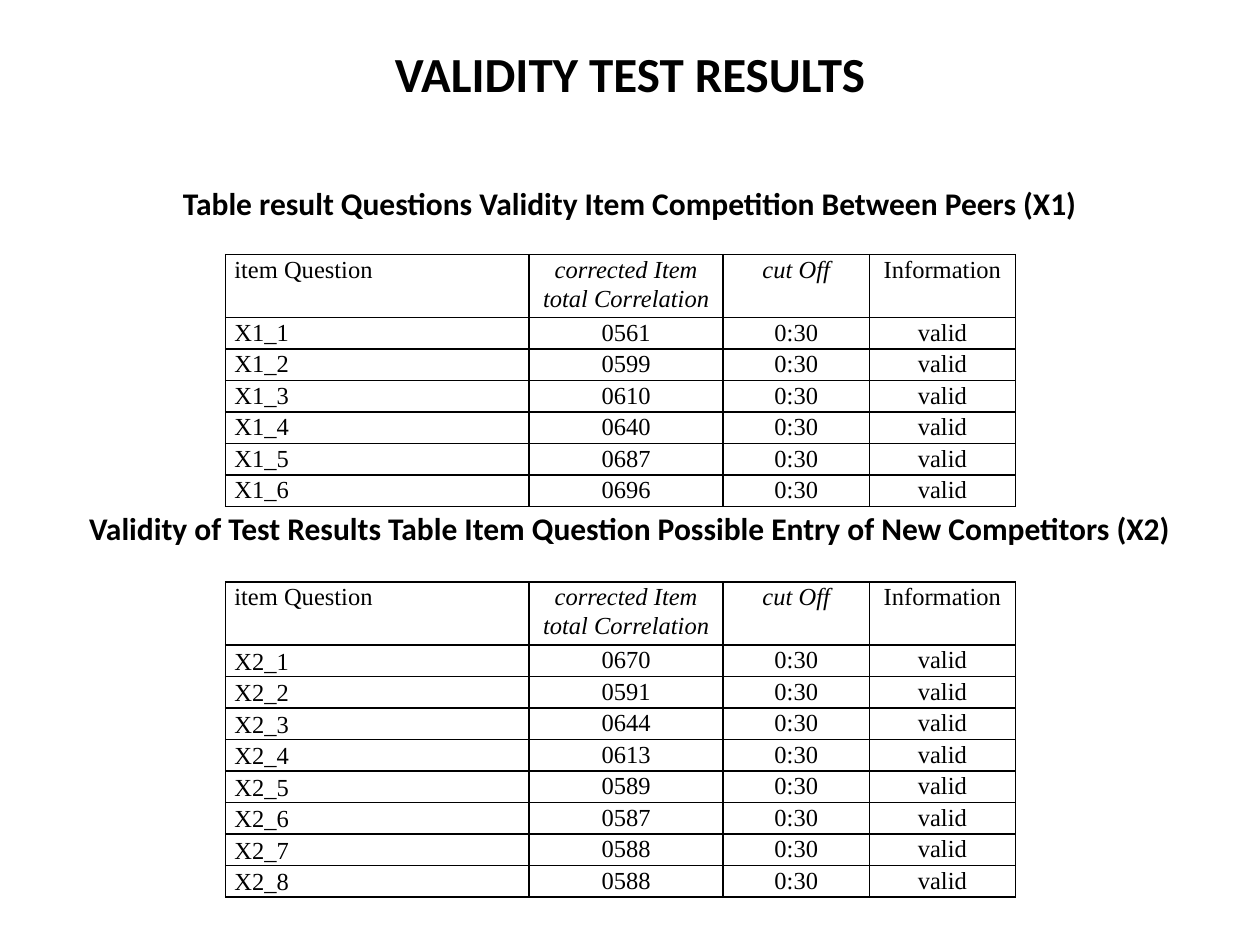
from dataclasses import dataclass

from lxml import etree
from pptx import Presentation
from pptx.dml.color import RGBColor
from pptx.enum.text import MSO_ANCHOR, MSO_AUTO_SIZE, PP_ALIGN
from pptx.oxml.ns import qn
from pptx.util import Emu, Inches, Pt

LEFT, CENTER = PP_ALIGN.LEFT, PP_ALIGN.CENTER
TOP, MIDDLE = MSO_ANCHOR.TOP, MSO_ANCHOR.MIDDLE
FIT_SHAPE = MSO_AUTO_SIZE.SHAPE_TO_FIT_TEXT

SLIDE_WIDTH, SLIDE_HEIGHT = Inches(10), Inches(7.5)
TABLE_LEFT = Inches(1.79)
COLUMN_WIDTHS = [Inches(width) for width in (2.41, 1.54, 1.16, 1.16)]
ROW_HEIGHT = Inches(0.25)
HEADER_ROWS = 2  # the header is as tall as two body rows
CELL_MARGIN = Inches(0.07)
LINE_SPACING = 1.07


@dataclass(frozen=True)
class Theme:
    ink: RGBColor = RGBColor(0, 0, 0)
    paper: RGBColor = RGBColor(255, 255, 255)
    heading_font: str = "Calibri"
    table_font: str = "Times New Roman"
    title_size: int = 28
    caption_size: int = 18
    table_size: int = 14
    border_width: int = 1


@dataclass(frozen=True)
class Heading:
    text: str
    top: float
    height: float
    size: int


@dataclass(frozen=True)
class ColumnHead:
    lines: tuple[str, ...]
    italic: bool = False


@dataclass(frozen=True)
class ValidityTable:
    variable: str
    top: float
    correlations: tuple[str, ...]
    label_anchor: MSO_ANCHOR


THEME = Theme()

# Slide content, with tops and heights in inches
HEADINGS = (
    Heading("VALIDITY TEST RESULTS", 0.3, 0.57, THEME.title_size),
    Heading("Table result Questions Validity Item Competition Between Peers (X1)",
            1.41, 0.4, THEME.caption_size),
    Heading("Validity of Test Results Table Item Question Possible Entry of New "
            "Competitors (X2)", 3.99, 0.4, THEME.caption_size),
)
COLUMN_HEADS = (
    ColumnHead(("item Question",)),
    ColumnHead(("corrected Item", "total Correlation"), italic=True),
    ColumnHead(("cut Off",), italic=True),
    ColumnHead(("Information",)),
)
CUT_OFF, VERDICT = "0:30", "valid"
TABLES = (
    ValidityTable("X1", 2.02, ("0561", "0599", "0610", "0640", "0687", "0696"), TOP),
    ValidityTable("X2", 4.62, ("0670", "0591", "0644", "0613", "0589", "0587",
                               "0588", "0588"), MIDDLE),
)


def add_run(paragraph, text: str, font_name: str, size: int,
            bold: bool = False, italic: bool = False) -> None:
    run = paragraph.add_run()
    run.text = text
    font = run.font
    font.name, font.size = font_name, Pt(size)
    font.bold, font.italic = bold, italic
    font.color.rgb = THEME.ink


def draw_heading(slide, heading: Heading) -> None:
    shape = slide.shapes.add_textbox(
        0, Inches(heading.top), SLIDE_WIDTH, Inches(heading.height))
    frame = shape.text_frame
    frame.word_wrap = True
    frame.auto_size = FIT_SHAPE
    paragraph = frame.paragraphs[0]
    paragraph.alignment = CENTER
    add_run(paragraph, heading.text, THEME.heading_font, heading.size, bold=True)


def set_borders(cell) -> None:
    properties = cell._tc.get_or_add_tcPr()
    # Border lines come before the fill in a cell's properties
    for position, side in enumerate(("a:lnL", "a:lnR", "a:lnT", "a:lnB")):
        line = etree.Element(qn(side), w=str(Pt(THEME.border_width)))
        fill = etree.SubElement(line, qn("a:solidFill"))
        etree.SubElement(fill, qn("a:srgbClr"), val=str(THEME.ink))
        properties.insert(position, line)


def fill_cell(cell, lines: tuple[str, ...], alignment: PP_ALIGN,
              anchor: MSO_ANCHOR = TOP, italic: bool = False) -> None:
    cell.margin_left = cell.margin_right = CELL_MARGIN
    cell.margin_top = cell.margin_bottom = 0
    cell.vertical_anchor = anchor
    cell.fill.solid()
    cell.fill.fore_color.rgb = THEME.paper
    set_borders(cell)
    frame = cell.text_frame
    for index, text in enumerate(lines):
        paragraph = frame.add_paragraph() if index else frame.paragraphs[0]
        paragraph.alignment = alignment
        paragraph.line_spacing = LINE_SPACING
        add_run(paragraph, text, THEME.table_font, THEME.table_size, italic=italic)


def draw_table(slide, validity: ValidityTable) -> None:
    body_rows = len(validity.correlations)
    table = slide.shapes.add_table(
        body_rows + 1, len(COLUMN_HEADS), TABLE_LEFT, Inches(validity.top),
        Emu(sum(COLUMN_WIDTHS)), Emu(ROW_HEIGHT * (body_rows + HEADER_ROWS))).table
    for column, width in zip(table.columns, COLUMN_WIDTHS):
        column.width = width
    for index, row in enumerate(table.rows):
        row.height = Emu(ROW_HEIGHT * (1 if index else HEADER_ROWS))

    # Header row
    for column, head in enumerate(COLUMN_HEADS):
        fill_cell(table.cell(0, column), head.lines,
                  CENTER if column else LEFT, italic=head.italic)

    # One row per question
    for row, correlation in enumerate(validity.correlations, start=1):
        values = (f"{validity.variable}_{row}", correlation, CUT_OFF, VERDICT)
        for column, value in enumerate(values):
            fill_cell(table.cell(row, column), (value,),
                      CENTER if column else LEFT,
                      TOP if column else validity.label_anchor)


def main() -> None:
    presentation = Presentation()
    presentation.slide_width, presentation.slide_height = SLIDE_WIDTH, SLIDE_HEIGHT
    slide = presentation.slides.add_slide(presentation.slide_layouts[6])
    slide.background.fill.solid()
    slide.background.fill.fore_color.rgb = THEME.paper

    # Title, then each table followed by its caption
    title, *captions = HEADINGS
    draw_heading(slide, title)
    for validity, caption in zip(TABLES, captions):
        draw_table(slide, validity)
        draw_heading(slide, caption)
    presentation.save("out.pptx")


if __name__ == "__main__":
    main()
